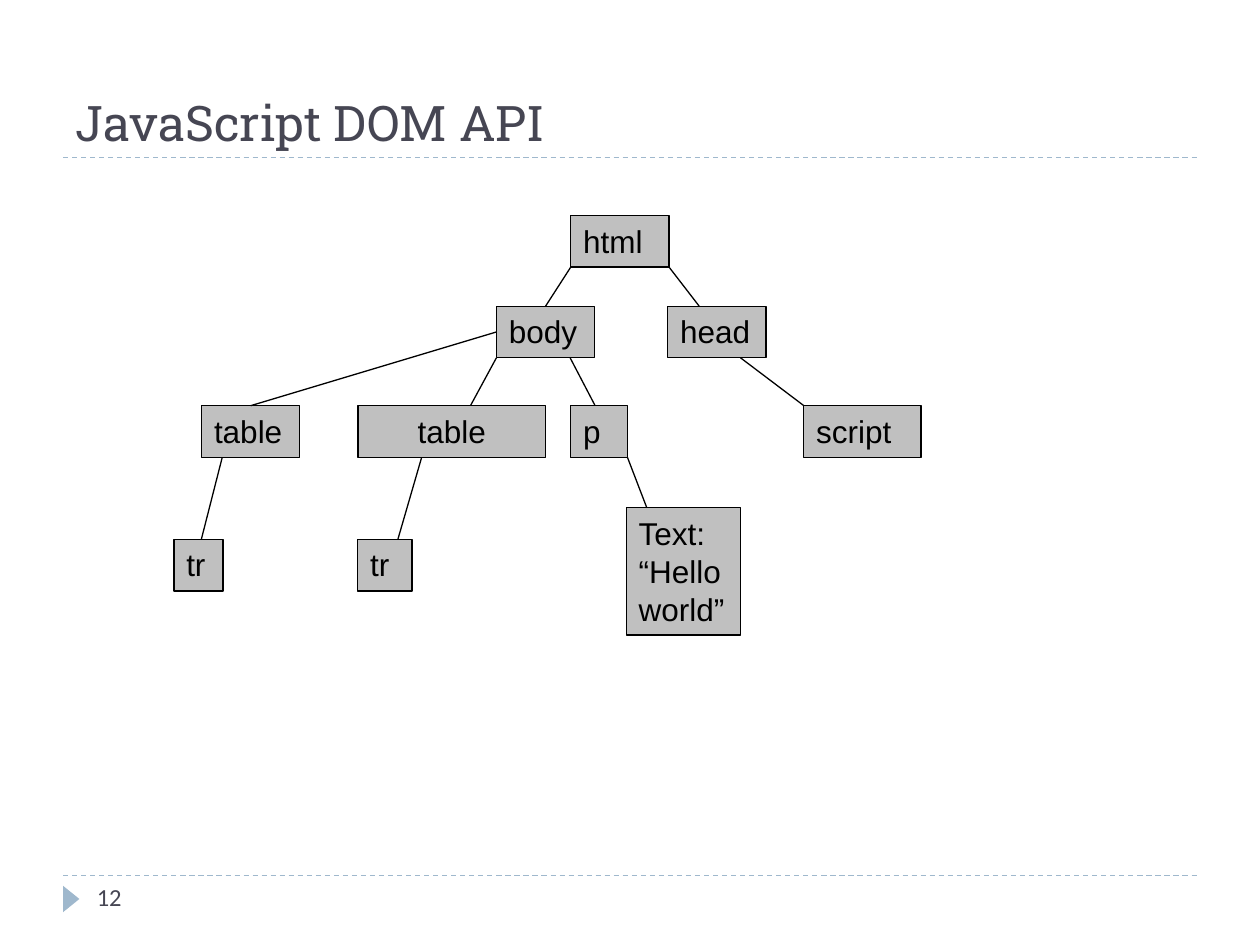
"""Builds a slide that shows a DOM tree under a title."""
from dataclasses import dataclass
from typing import NamedTuple

from lxml.etree import SubElement
from pptx import Presentation
from pptx.dml.color import RGBColor
from pptx.enum.dml import MSO_LINE_DASH_STYLE as Dash
from pptx.enum.shapes import MSO_CONNECTOR as Connector, MSO_SHAPE as Shape
from pptx.enum.text import MSO_ANCHOR as Anchor, PP_ALIGN as Align
from pptx.oxml.ns import qn
from pptx.util import Inches, Pt

COLUMNS, ROWS = 100, 75
LEVELS = (17.1, 24.3, 32.2, 40.3, 42.8)
SITES = {(0.5, 0): 0, (0, 0.5): 1, (0.5, 1): 2, (1, 0.5): 3}


@dataclass(frozen=True)
class Style:
    font: str
    size: float
    color: RGBColor


@dataclass(frozen=True)
class Theme:
    accent: RGBColor = RGBColor(0x9F, 0xB8, 0xCD)
    node: RGBColor = RGBColor(0xC0, 0xC0, 0xC0)
    ink: RGBColor = RGBColor(0, 0, 0)
    slate: RGBColor = RGBColor(0x46, 0x46, 0x53)
    line: float = 0.75

    @property
    def title(self) -> Style:
        return Style("Roboto Slab", 28, self.slate)

    @property
    def number(self) -> Style:
        return Style("Calibri", 14, self.slate)

    @property
    def label(self) -> Style:
        return Style("Arial", 18, self.ink)


class Area(NamedTuple):
    column: float
    row: float
    width: float
    height: float

    def point(self, across: float, down: float) -> tuple[float, float]:
        return self.column + across * self.width, self.row + down * self.height


class Node(NamedTuple):
    text: str
    column: float
    level: int
    width: float
    height: float = 4.1
    align: Align = Align.LEFT

    @property
    def area(self) -> Area:
        return Area(self.column, LEVELS[self.level], self.width, self.height)


class Branch(NamedTuple):
    parent: str
    start: tuple[float, float]
    child: str
    across: float


THEME = Theme()
NODES = {
    "html": Node("html", 45.3, 0, 7.8),
    "body": Node("body", 39.4, 1, 7.8),
    "head": Node("head", 53, 1, 7.8),
    "script": Node("script", 63.8, 2, 9.3),
    "wide table": Node("table", 28.4, 2, 14.9, align=Align.CENTER),
    "paragraph": Node("p", 45.3, 2, 4.5),
    "greeting": Node("Text: “Hello world”", 49.7, 3, 9.1, 10.1),
    "left table": Node("table", 16, 2, 7.8),
    "left row": Node("tr", 13.8, 4, 3.9),
    "wide row": Node("tr", 28.4, 4, 4.3),
}
BRANCHES = (
    Branch("html", (0, 1), "body", 0.5),
    Branch("html", (1, 1), "head", 0.32),
    Branch("head", (0.74, 1), "script", 0),
    Branch("body", (0, 1), "wide table", 0.6),
    Branch("body", (0.75, 1), "paragraph", 0.43),
    Branch("paragraph", (1, 1), "greeting", 0.18),
    Branch("body", (0, 0.5), "left table", 0.5),
    Branch("left table", (0.21, 1), "left row", 0.56),
    Branch("wide table", (0.34, 1), "wide row", 0.74),
)


class Canvas:
    def __init__(self, deck):
        self.page = deck.slides.add_slide(deck.slide_layouts[6])
        self.column = deck.slide_width / COLUMNS
        self.row = deck.slide_height / ROWS

    def place(self, column: float, row: float) -> tuple[int, int]:
        return round(column * self.column), round(row * self.row)

    def fill_text(self, box, text: str, style: Style,
                  align: Align = Align.LEFT, anchor: Anchor = Anchor.TOP) -> None:
        frame = box.text_frame
        frame.word_wrap, frame.vertical_anchor = True, anchor
        para = frame.paragraphs[0]
        para.alignment = align
        span = para.add_run()
        span.text = text
        for name, value in {"name": style.font, "size": Pt(style.size)}.items():
            setattr(span.font, name, value)
        span.font.color.rgb = style.color

    def text(self, area: Area, text: str, style: Style, anchor: Anchor) -> None:
        box = self.page.shapes.add_textbox(*self.place(*area[:2]), *self.place(*area[2:]))
        self.fill_text(box, text, style, anchor=anchor)

    def shape(self, kind: Shape, area: Area, fill: RGBColor):
        box = self.page.shapes.add_shape(kind, *self.place(*area[:2]), *self.place(*area[2:]))
        box.shadow.inherit = False
        box.fill.solid()
        box.fill.fore_color.rgb = fill
        box.line.fill.background()
        return box

    def node(self, node: Node):
        box = self.shape(Shape.RECTANGLE, node.area, THEME.node)
        box.line.color.rgb = THEME.ink
        box.line.width = Pt(THEME.line)
        self.fill_text(box, node.text, THEME.label, node.align)
        return box

    def line(self, start: tuple[float, float], end: tuple[float, float], color: RGBColor):
        line = self.page.shapes.add_connector(
            Connector.STRAIGHT, *self.place(*start), *self.place(*end))
        line.line.color.rgb = color
        line.line.width = Pt(THEME.line)
        SubElement(line._element.spPr, qn("a:effectLst"))
        return line

    def branch(self, branch: Branch, boxes: dict) -> None:
        end = (branch.across, 0)
        line = self.line(NODES[branch.parent].area.point(*branch.start),
                         NODES[branch.child].area.point(*end), THEME.ink)
        if branch.start in SITES:
            line.begin_connect(boxes[branch.parent], SITES[branch.start])
        if end in SITES:
            line.end_connect(boxes[branch.child], SITES[end])


def main() -> None:
    deck = Presentation()
    for name, value in {"slide_width": 10, "slide_height": 7.5}.items():
        setattr(deck, name, Inches(value))
    canvas = Canvas(deck)
    for row in (69.5, 12.5):
        rule = canvas.line((5, row), (95, row), THEME.accent)
        rule.line.dash_style = Dash.DASH
    marker = canvas.shape(Shape.ISOSCELES_TRIANGLE, Area(4.6, 70.7, 2.1, 1.3), THEME.accent)
    marker.rotation = 90
    canvas.text(Area(5, 1.7, 90, 10.8), "JavaScript DOM API", THEME.title, Anchor.BOTTOM)
    canvas.text(Area(6.7, 69.5, 21.7, 4), "12", THEME.number, Anchor.TOP)
    boxes = {name: canvas.node(node) for name, node in NODES.items()}
    for branch in BRANCHES:
        canvas.branch(branch, boxes)
    deck.save("out.pptx")


if __name__ == "__main__":
    main()
